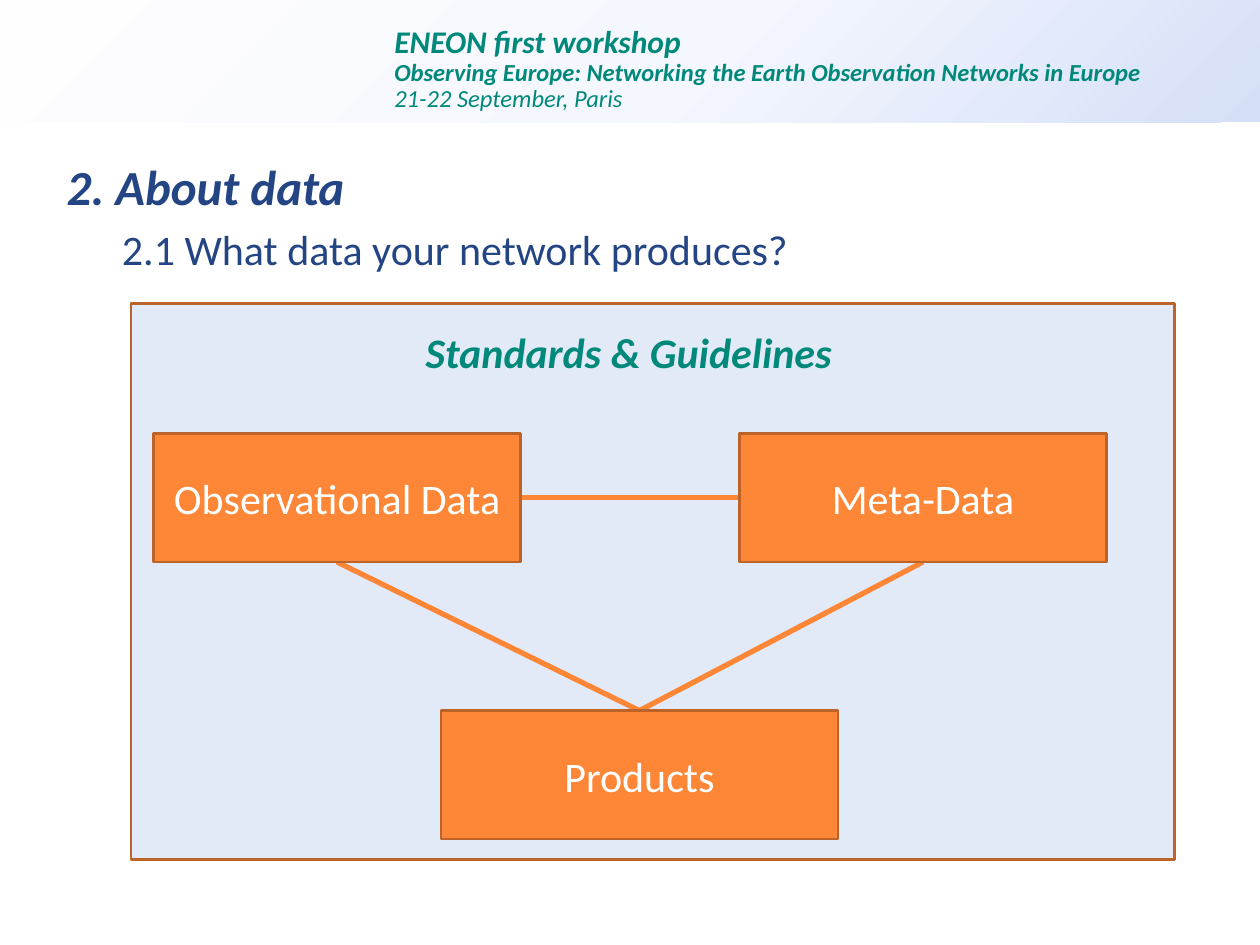
from lxml.etree import SubElement as Sub
from pptx import Presentation as Deck
from pptx.dml.color import RGBColor as Rgb
from pptx.enum.shapes import MSO_CONNECTOR as Wire, MSO_SHAPE as Form
from pptx.enum.text import MSO_ANCHOR as Anchor, PP_ALIGN as Align
from pptx.oxml import parse_xml
from pptx.oxml.ns import nsdecls, qn
from pptx.util import Inches, Pt

WIDE, HIGH = Inches(10), Inches(7.5)
INK = {
    "teal": "00897A", "navy": "244583", "white": "FFFFFF",
    "panel": "E3EAF7", "fill": "FE8637", "edge": "BC6329",
}
FADE = [(0, "FEFEFF"), (55, "F4F7FD"), (100, "D5DFF8")]
TOP, LEFT, BASE, RIGHT = range(4)  # sides of a rectangle


def tint(name):
    return Rgb.from_string(INK[name])


def area(left, top, wide, high):
    """Turn percentages of the slide into lengths."""
    return [int(share * full / 100) for share, full in
            zip((left, top, wide, high), (WIDE, HIGH) * 2)]


def style(para, text, size, ink, bold=False, slant=False):
    para.text = text
    font = para.font
    font.name, font.size = "Calibri", Pt(size)
    font.bold, font.italic = bold, slant
    font.color.rgb = tint(ink)


def indent(para, left, first=0):
    prop = para._p.get_or_add_pPr()
    prop.set("marL", str(Inches(left)))
    prop.set("indent", str(Inches(first)))


def rect(slide, place, fill):
    box = slide.shapes.add_shape(Form.RECTANGLE, *area(*place))
    box.shadow.inherit = False
    box.fill.solid()
    box.fill.fore_color.rgb = tint(fill)
    box.line.color.rgb = tint("edge")
    box.line.width = Pt(1.5)
    return box


def node(slide, place, text):
    box = rect(slide, place, "fill")
    frame = box.text_frame
    frame.word_wrap = True
    frame.vertical_anchor = Anchor.MIDDLE
    para = frame.paragraphs[0]
    para.alignment = Align.CENTER
    style(para, text, 24, "white")
    return box


def link(slide):
    line = slide.shapes.add_connector(Wire.STRAIGHT, 0, 0, 0, 0)
    line.line.color.rgb = tint("fill")
    line.line.width = Pt(3)
    Sub(line._element.spPr, qn("a:effectLst"))
    return line


def blend(box):
    """Fill with a round gradient centred above and left of the box."""
    stops = "".join(f'<a:gs pos="{pos * 1000}"><a:srgbClr val="{hue}"/></a:gs>'
                    for pos, hue in FADE)
    grad = parse_xml(
        f'<a:gradFill {nsdecls("a")} rotWithShape="1"><a:gsLst>{stops}</a:gsLst>'
        '<a:path path="circle"><a:fillToRect l="-40000" t="-90000" '
        'r="140000" b="190000"/></a:path></a:gradFill>')
    prop = box._element.spPr
    prop.replace(prop.find(qn("a:solidFill")), grad)


def header(slide):
    box = rect(slide, (0, 0, 100, 12.93), "white")
    box.line.fill.background()
    blend(box)
    frame = box.text_frame
    frame.word_wrap = True
    frame.vertical_anchor = Anchor.TOP
    frame.margin_left = frame.margin_right = Inches(0.13)
    frame.margin_top = Inches(0.27)
    rows = [
        ("ENEON first workshop", 18, True),
        ("Observing Europe: Networking the Earth Observation Networks in Europe",
         14, True),
        ("21-22 September, Paris", 14, False),
    ]
    for num, (text, size, bold) in enumerate(rows):
        para = frame.add_paragraph() if num else frame.paragraphs[0]
        indent(para, 3)
        para.alignment = Align.LEFT
        para.line_spacing = Pt(15)
        style(para, text, size, "teal", bold, True)


def title(slide):
    frame = slide.shapes.add_textbox(*area(4.3, 15.9, 90, 73.3)).text_frame
    frame.word_wrap = True
    head = frame.paragraphs[0]
    indent(head, 0.56, -0.56)
    style(head, "2. About data", 28, "navy", True, True)
    sub = frame.add_paragraph()
    sub.level = 1
    indent(sub, 1, -0.56)
    sub.alignment = Align.JUSTIFY
    sub.space_before = Pt(5)
    style(sub, "2.1 What data your network produces?", 24, "navy")


def chart(slide):
    # Lines come first so that the boxes cover their ends
    lines = [link(slide) for _ in range(3)]
    data = node(slide, (12.2, 45.87, 29.1, 13.6), "Observational Data")
    meta = node(slide, (58.7, 45.87, 29.1, 13.6), "Meta-Data")
    goods = node(slide, (35, 75.2, 31.5, 13.6), "Products")
    goods.text_frame.paragraphs[0].line_spacing = Pt(30)
    ends = [(data, BASE, goods, TOP), (data, RIGHT, meta, LEFT),
            (meta, BASE, goods, TOP)]
    for line, (start, out, stop, into) in zip(lines, ends):
        line.begin_connect(start, out)
        line.end_connect(stop, into)


def label(slide):
    frame = slide.shapes.add_textbox(*area(32.8, 33.87, 34.5, 6.67)).text_frame
    frame.word_wrap = False
    style(frame.paragraphs[0], "Standards & Guidelines", 24, "teal", True, True)


def main():
    deck = Deck()
    deck.slide_width, deck.slide_height = WIDE, HIGH
    slide = deck.slides.add_slide(deck.slide_layouts[6])
    header(slide)
    rect(slide, (10.4, 32.13, 82.8, 58.8), "panel")
    title(slide)
    chart(slide)
    label(slide)
    deck.save("out.pptx")


if __name__ == "__main__":
    main()
